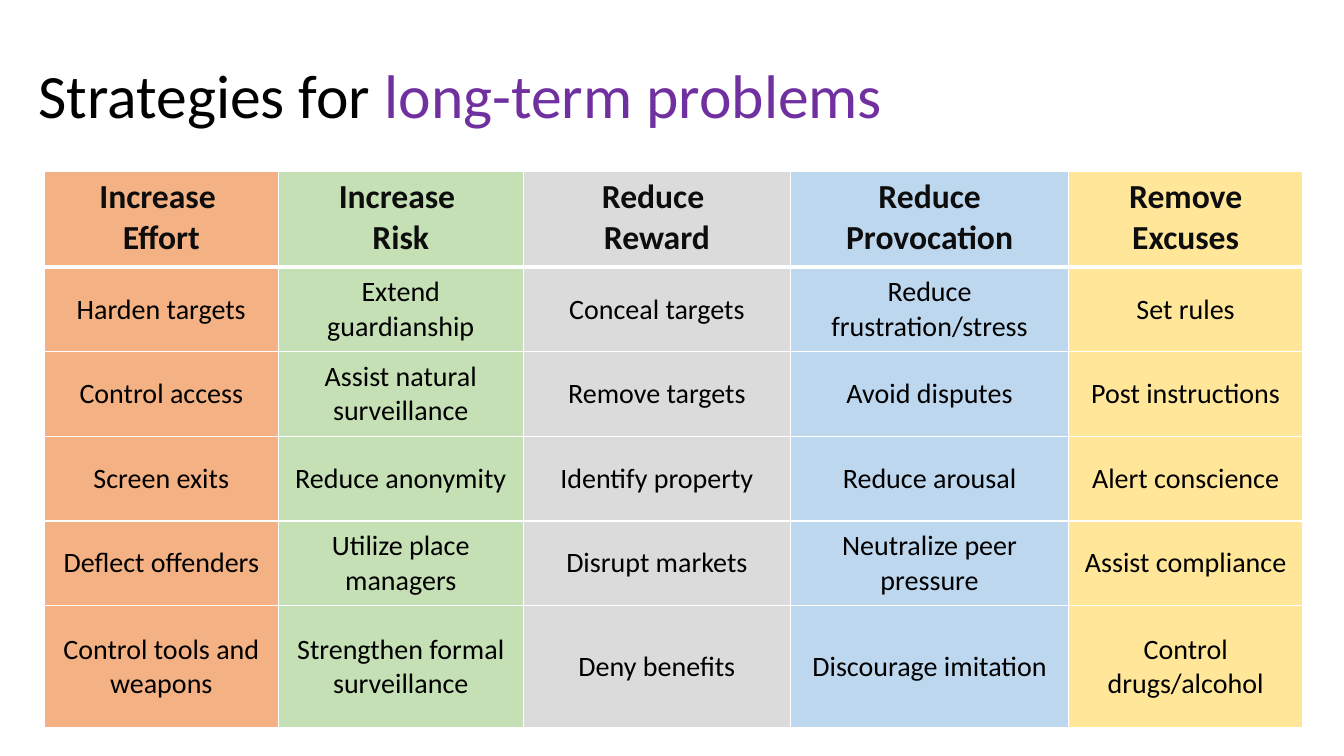
from lxml.etree import SubElement
from pptx import Presentation
from pptx.dml.color import RGBColor
from pptx.enum.text import MSO_ANCHOR, MSO_AUTO_SIZE, PP_ALIGN
from pptx.oxml.ns import qn
from pptx.util import Inches, Pt

FONT = "Calibri"
TITLE_ONLY = 5
COLORS = {
    "title": "000000",
    "accent": "7030A0",
    "heading": "0D0D0D",
    "body": "000000",
    "border": "FFFFFF",
    "orange": "F4B183",
    "green": "C5E0B4",
    "gray": "DBDBDB",
    "blue": "BDD7EE",
    "yellow": "FFE699",
}

# Each strategy: heading paragraphs, fill, column width, techniques
STRATEGIES = [
    (["Increase ", "Effort"], "orange", 2.32,
     ["Harden targets", "Control access", "Screen exits",
      "Deflect offenders", "Control tools and weapons"]),
    (["Increase ", "Risk"], "green", 2.43,
     ["Extend guardianship", "Assist natural surveillance", "Reduce anonymity",
      "Utilize place managers", "Strengthen formal surveillance"]),
    (["Reduce ", "Reward"], "gray", 2.65,
     ["Conceal targets", "Remove targets", "Identify property",
      "Disrupt markets", "Deny benefits"]),
    (["Reduce Provocation"], "blue", 2.76,
     ["Reduce frustration/stress", "Avoid disputes", "Reduce arousal",
      "Neutralize peer pressure", "Discourage imitation"]),
    (["Remove Excuses"], "yellow", 2.32,
     ["Set rules", "Post instructions", "Alert conscience",
      "Assist compliance", "Control drugs/alcohol"]),
]
ROW_HEIGHTS = [0.95] + [0.84] * 4 + [1.21]
HEADING_BORDERS = {"a:lnL": 1, "a:lnR": 1, "a:lnT": 1, "a:lnB": 3}


def add_span(para, text, *, size, color, bold=False):
    span = para.add_run()
    span.text = text
    span.font.name = FONT
    span.font.size = Pt(size)
    span.font.bold = bold
    span.font.color.rgb = RGBColor.from_string(COLORS[color])


def add_title(page):
    title = page.shapes.title
    title.left, title.top = Inches(0.28), Inches(0.25)
    title.width, title.height = Inches(11.5), Inches(1.45)
    frame = title.text_frame
    frame.word_wrap = True
    frame.auto_size = MSO_AUTO_SIZE.NONE
    frame.vertical_anchor = MSO_ANCHOR.MIDDLE
    para = frame.paragraphs[0]
    para.alignment = PP_ALIGN.LEFT
    para.line_spacing = 0.9
    add_span(para, "Strategies for ", size=44, color="title")
    add_span(para, "long-term problems", size=44, color="accent")


def set_borders(cell, widths):
    """Draw cell edges; widths maps line tags, in schema order, to points."""
    properties = cell._tc.get_or_add_tcPr()
    for position, (tag, width) in enumerate(widths.items()):
        line = SubElement(properties, qn(tag), w=str(Pt(width)))
        fill = SubElement(line, qn("a:solidFill"))
        SubElement(fill, qn("a:srgbClr"), val=COLORS["border"])
        properties.insert(position, line)


def fill_cell(cell, lines, fill, anchor, **text_format):
    cell.fill.solid()
    cell.fill.fore_color.rgb = RGBColor.from_string(COLORS[fill])
    cell.vertical_anchor = anchor
    frame = cell.text_frame
    for index, line in enumerate(lines):
        para = frame.add_paragraph() if index else frame.paragraphs[0]
        para.alignment = PP_ALIGN.CENTER
        add_span(para, line, **text_format)


def add_strategy_table(page):
    widths = [width for _, _, width, _ in STRATEGIES]
    table = page.shapes.add_table(
        len(ROW_HEIGHTS), len(STRATEGIES), Inches(0.44), Inches(1.7),
        Inches(sum(widths)), Inches(sum(ROW_HEIGHTS))).table
    for row, height in zip(table.rows, ROW_HEIGHTS):
        row.height = Inches(height)
    for column, (heading, fill, width, techniques) in enumerate(STRATEGIES):
        table.columns[column].width = Inches(width)
        heading_cell = table.cell(0, column)
        fill_cell(heading_cell, heading, fill, MSO_ANCHOR.TOP,
                  size=24, color="heading", bold=True)
        set_borders(heading_cell, HEADING_BORDERS)
        for row, technique in enumerate(techniques, start=1):
            fill_cell(table.cell(row, column), [technique], fill,
                      MSO_ANCHOR.MIDDLE, size=20, color="body")


def main():
    deck = Presentation()
    deck.slide_width, deck.slide_height = Inches(13.33), Inches(7.5)
    page = deck.slides.add_slide(deck.slide_layouts[TITLE_ONLY])
    add_title(page)
    add_strategy_table(page)
    deck.save("out.pptx")


if __name__ == "__main__":
    main()
